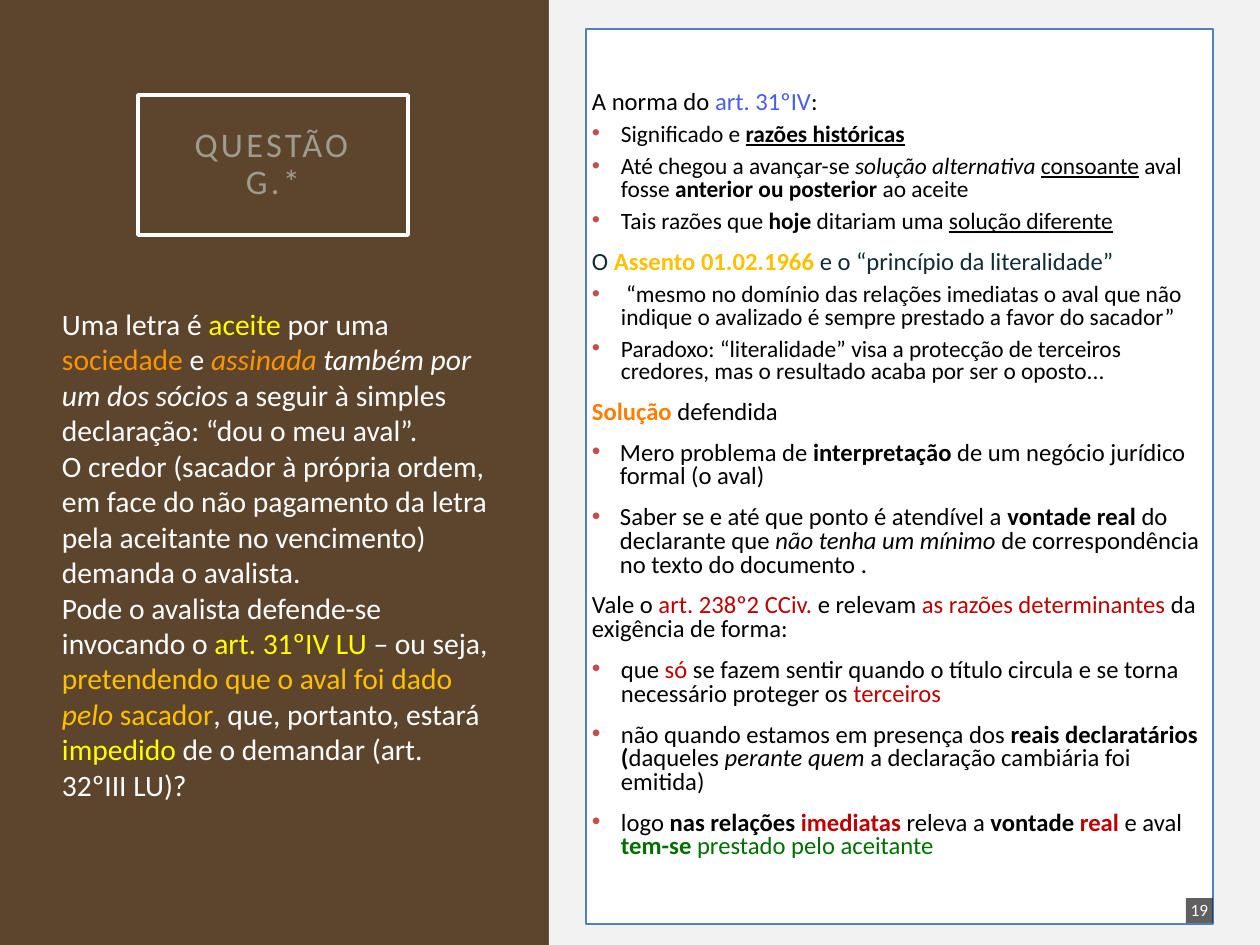
from lxml import etree
from pptx import Presentation
from pptx import util as u
from pptx.dml.color import RGBColor
from pptx.enum import shapes, text
from pptx.oxml import ns

SCALE = 10320
WHITE, BLACK, YELLOW, ORANGE = "FFFFFF", "000000", "FFFF00", "FF9300"
AMBER, RED, NAVY, GREEN = "FFC000", "C00000", "102C34", "006F00"

FORMATS = {
    "title": {"size": 28, "spacing": 0.9, "align": text.PP_ALIGN.CENTER, "tracking": 270},
    "number": {"size": 14, "spacing": 0.9, "align": text.PP_ALIGN.CENTER},
    "case": {"size": 24, "spacing": 1.0},
    "opening": {"size": 20, "spacing": 0.72},
    "heading": {"size": 20, "spacing": 0.8, "before": 14},
    "detail": {"size": 19, "spacing": 0.8, "before": 8, "indent": 29},
    "solution": {"size": 20, "spacing": 0.8, "before": 14, "indent": 28},
    "reason": {"size": 20, "spacing": 0.8, "before": 14, "indent": 29},
}

CASE = [
    ("case", [("Uma letra é ",), ("aceite", "", YELLOW), (" por uma ",),
              ("sociedade", "", ORANGE), (" e ",), ("assinada", "i", ORANGE),
              (" também por um dos sócios ", "i"),
              ("a seguir à simples declaração: “dou o meu aval”.",)]),
    ("case", [("O credor (sacador à própria ordem, em face do não pagamento da letra "
               "pela aceitante no vencimento) demanda o avalista.",)]),
    ("case", [("Pode o avalista defende-se invocando o ",), ("art. 31ºIV LU ", "", YELLOW),
              ("– ou seja, ",), ("pretendendo que o aval foi dado ", "", AMBER),
              ("pelo", "i", AMBER), (" sacador", "", AMBER),
              (", que, portanto, estará ",), ("impedido", "", YELLOW),
              (" de o demandar (art. 32ºIII LU)?",)]),
]

ANSWER = [
    ("opening", [("A norma do ",), ("art. 31ºIV", "", "4A5DE6"), (":",)]),
    ("detail", [("Significado e ",), ("razões históricas", "bu")]),
    ("detail", [("Até chegou a avançar-se ",), ("solução alternativa ", "i"),
                ("consoante", "u"), (" aval fosse ",),
                ("anterior ou posterior", "b"), (" ao aceite",)]),
    ("detail", [("Tais razões que ",), ("hoje", "b"), (" ditariam uma ",),
                ("solução diferente", "u")]),
    ("heading", [("O ", "", NAVY), ("Assento 01.02.1966 ", "b", AMBER),
                 ("e o “princípio da literalidade”", "", NAVY)]),
    ("detail", [(" “mesmo no domínio das relações imediatas o aval que não indique "
                 "o avalizado é sempre prestado a favor do sacador”",)]),
    ("detail", [("Paradoxo: “literalidade” visa a protecção de terceiros credores, "
                 "mas o resultado acaba por ser o oposto...",)]),
    ("heading", [("Solução", "b", "FF7E00"), (" defendida",)]),
    ("solution", [("Mero problema de ",), ("interpretação", "b"),
                  (" de um negócio jurídico formal (o aval)",)]),
    ("solution", [("Saber se e até que ponto é atendível a ",), ("vontade real ", "b"),
                  ("do declarante que ",), ("não tenha um mínimo", "i"),
                  (" de correspondência no texto do documento .",)]),
    ("heading", [("Vale o ",), ("art. 238º2 CCiv. ", "", RED), ("e relevam ",),
                 ("as razões determinantes ", "", RED), ("da exigência de forma:",)]),
    ("reason", [("que ",), ("só", "", RED),
                (" se fazem sentir quando o título circula e se torna "
                 "necessário proteger os ",), ("terceiros", "", RED)]),
    ("reason", [("não quando estamos em presença dos ",), ("reais declaratários (", "b"),
                ("daqueles ",), ("perante quem ", "i"),
                ("a declaração cambiária foi emitida)",)]),
    ("reason", [("logo ",), ("nas relações ", "b"), ("imediatas", "b", RED),
                (" releva a ",), ("vontade ", "b"), ("real ", "b", RED), ("e aval ",),
                ("tem-se", "b", GREEN), (" prestado pelo aceitante", "", GREEN)]),
]


def px(value):
    return u.Emu(value * SCALE)


def color(value):
    return RGBColor.from_string(value)


def add_xml(parent, tag, **attributes):
    return etree.SubElement(parent, ns.qn(tag), attributes)


class SlideBuilder:
    font = "Calibri"
    bullet = "C0504D"

    def __init__(self, presentation, background):
        self.slide = presentation.slides.add_slide(presentation.slide_layouts[6])
        self.slide.background.fill.solid()
        self.slide.background.fill.fore_color.rgb = color(background)

    def rectangle(self, box, fill=None, line=None, width=1, alpha=None):
        shape = self.slide.shapes.add_shape(shapes.MSO_SHAPE.RECTANGLE, *map(px, box))
        shape.shadow.inherit = False
        if fill:
            shape.fill.solid()
            shape.fill.fore_color.rgb = color(fill)
        else:
            shape.fill.background()
        if alpha:
            paint = shape._element.spPr.find(ns.qn("a:solidFill"))[0]
            add_xml(paint, "a:alpha", val=str(alpha * 1000))
        if line:
            shape.line.color.rgb = color(line)
            shape.line.width = u.Pt(width)
        else:
            shape.line.fill.background()
        return shape

    def text_box(self, box):
        return self.slide.shapes.add_textbox(*map(px, box))

    def fill_text(self, shape, paragraphs, ink, inset, anchor=text.MSO_ANCHOR.MIDDLE,
                  fit=text.MSO_AUTO_SIZE.NONE):
        frame = shape.text_frame
        settings = {"word_wrap": True, "auto_size": fit, "vertical_anchor": anchor}
        for side in ("left", "top", "right", "bottom"):
            settings["margin_" + side] = px(inset)
        for name, value in settings.items():
            setattr(frame, name, value)
        for index, (kind, runs) in enumerate(paragraphs):
            paragraph = frame.add_paragraph() if index else frame.paragraphs[0]
            self.paragraph(paragraph, FORMATS[kind], runs, ink)

    def paragraph(self, paragraph, style, runs, ink):
        settings = {
            "alignment": style.get("align", text.PP_ALIGN.LEFT),
            "line_spacing": style["spacing"],
            "space_before": u.Pt(style.get("before", 0)),
        }
        for name, value in settings.items():
            setattr(paragraph, name, value)
        if "indent" in style:
            properties = paragraph._p.get_or_add_pPr()
            properties.set("marL", str(px(style["indent"])))
            properties.set("indent", str(-px(style["indent"])))
            add_xml(add_xml(properties, "a:buClr"), "a:srgbClr", val=self.bullet)
            add_xml(properties, "a:buFont", typeface="Arial")
            add_xml(properties, "a:buChar", char="•")
        for words, *look in runs:
            marks, paint = look + ["", ink][len(look):]
            run = paragraph.add_run()
            run.text = words
            font = {"name": self.font, "size": u.Pt(style["size"]), "bold": "b" in marks,
                    "italic": "i" in marks, "underline": "u" in marks}
            for name, value in font.items():
                setattr(run.font, name, value)
            run.font.color.rgb = color(paint)
            if "tracking" in style:
                run._r.get_or_add_rPr().set("spc", str(style["tracking"]))


def main():
    presentation = Presentation()
    presentation.slide_width, presentation.slide_height = px(1260), px(945)
    builder = SlideBuilder(presentation, "5D442C")

    title = builder.rectangle((138, 95, 270, 140), line=WHITE, width=3)
    builder.fill_text(title, [("title", [("QUESTÃO G.*",)])], "9E9C8F", 25)

    builder.rectangle((549, 0, 711, 945), fill="F2F2F2")
    answer = builder.rectangle((586, 29, 627, 895), fill=WHITE, line="4F81BD")
    builder.fill_text(answer, ANSWER, BLACK, 6)

    number = builder.rectangle((1186, 898, 27, 25), fill="1D1D1D", alpha=70)
    builder.fill_text(number, [("number", [("19",)])], WHITE, 3)

    case = builder.text_box((56, 300, 440, 495))
    builder.fill_text(case, CASE, WHITE, 6, text.MSO_ANCHOR.TOP,
                      text.MSO_AUTO_SIZE.SHAPE_TO_FIT_TEXT)

    presentation.save("out.pptx")


if __name__ == "__main__":
    main()
